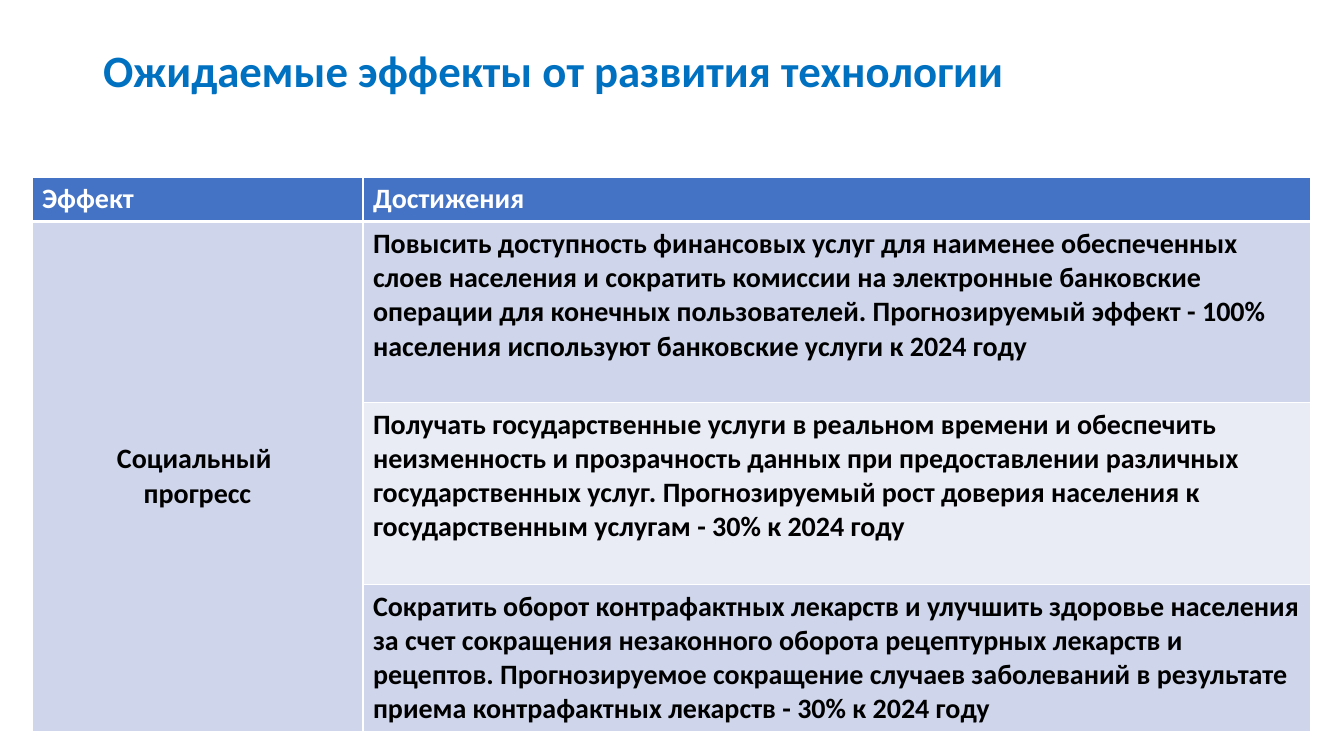
from lxml import etree
from pptx import Presentation
from pptx.dml.color import RGBColor
from pptx.enum.text import MSO_ANCHOR, PP_ALIGN
from pptx.oxml.ns import qn
from pptx.util import Pt

MIDDLE = MSO_ANCHOR.MIDDLE
TOP = MSO_ANCHOR.TOP
LEFT = PP_ALIGN.LEFT
CENTER = PP_ALIGN.CENTER
TITLE_ONLY = 5
EMU_PER_PX = 914400 / 100.8
SLIDE_SIZE = (1344, 756)
TITLE_BOX = (93, 0, 1159, 146)
TABLE_BOX = (32, 177, 1279, 554)
EFFECT_WIDTH = 331
ROW_HEIGHTS = (44, 181, 182, 147)
FONT = "Calibri"
COLORS = {
    "title": "0070C0",
    "header": "4472C4",
    "band": "CFD5EA",
    "light band": "E9EBF5",
    "white": "FFFFFF",
    "text": "000000",
}
TITLE = "Ожидаемые эффекты от развития технологии"
HEADERS = ("Эффект", "Достижения")
EFFECT = "Социальный \nпрогресс"
ACHIEVEMENTS = (
    "Повысить доступность финансовых услуг для наименее обеспеченных слоев "
    "населения и сократить комиссии на электронные банковские операции для "
    "конечных пользователей. Прогнозируемый эффект - 100% населения "
    "используют банковские услуги к 2024 году",
    "Получать государственные услуги в реальном времени и обеспечить "
    "неизменность и прозрачность данных при предоставлении различных "
    "государственных услуг. Прогнозируемый рост доверия населения к "
    "государственным услугам - 30% к 2024 году",
    "Сократить оборот контрафактных лекарств и улучшить здоровье населения "
    "за счет сокращения незаконного оборота рецептурных лекарств и рецептов. "
    "Прогнозируемое сокращение случаев заболеваний в результате приема "
    "контрафактных лекарств - 30% к 2024 году",
)


def px(length):
    return round(length * EMU_PER_PX)


def color(name):
    return RGBColor.from_string(COLORS[name])


def format_paragraph(paragraph, size, color_name, alignment=LEFT):
    paragraph.alignment = alignment
    paragraph.font.name = FONT
    paragraph.font.size = Pt(size)
    paragraph.font.bold = True
    paragraph.font.color.rgb = color(color_name)


def add_title(slide, box):
    title = slide.shapes.title
    title.left, title.top, title.width, title.height = map(px, box)
    frame = title.text_frame
    frame.text = TITLE
    frame.word_wrap = True
    frame.vertical_anchor = MIDDLE
    paragraph = frame.paragraphs[0]
    paragraph.line_spacing = 0.9
    format_paragraph(paragraph, 32, "title")


def set_borders(cell, top, bottom):
    properties = cell._tc.get_or_add_tcPr()
    widths = {"a:lnL": 1, "a:lnR": 1, "a:lnT": top, "a:lnB": bottom}
    for index, (tag, width) in enumerate(widths.items()):
        line = etree.Element(qn(tag), w=str(Pt(width)))
        fill = etree.SubElement(line, qn("a:solidFill"))
        etree.SubElement(fill, qn("a:srgbClr"), val=COLORS["white"])
        properties.insert(index, line)


def fill_cell(cell, text, fill, text_color="text", alignment=LEFT, anchor=TOP):
    cell.text = text
    cell.vertical_anchor = anchor
    cell.fill.solid()
    cell.fill.fore_color.rgb = color(fill)
    for paragraph in cell.text_frame.paragraphs:
        format_paragraph(paragraph, 20, text_color, alignment)


def add_effects_table(slide, box):
    row_count = len(ROW_HEIGHTS)
    table = slide.shapes.add_table(row_count, 2, *map(px, box)).table
    table.columns[0].width = px(EFFECT_WIDTH)
    table.columns[1].width = px(box[2] - EFFECT_WIDTH)
    for row, height in zip(table.rows, ROW_HEIGHTS):
        row.height = px(height)
    for column, header in enumerate(HEADERS):
        fill_cell(table.cell(0, column), header, "header", "white")
    table.cell(1, 0).merge(table.cell(row_count - 1, 0))
    fill_cell(table.cell(1, 0), EFFECT, "band", alignment=CENTER, anchor=MIDDLE)
    for row, achievement in enumerate(ACHIEVEMENTS, start=1):
        fill = "band" if row % 2 else "light band"
        fill_cell(table.cell(row, 1), achievement, fill)
    for row in range(row_count):
        for column in range(2):
            top = 3 if row == 1 else 1
            bottom = 3 if row == 0 else 1
            set_borders(table.cell(row, column), top, bottom)


def main():
    presentation = Presentation()
    presentation.slide_width, presentation.slide_height = map(px, SLIDE_SIZE)
    slide = presentation.slides.add_slide(presentation.slide_layouts[TITLE_ONLY])
    add_title(slide, TITLE_BOX)
    add_effects_table(slide, TABLE_BOX)
    presentation.save("out.pptx")


if __name__ == "__main__":
    main()
